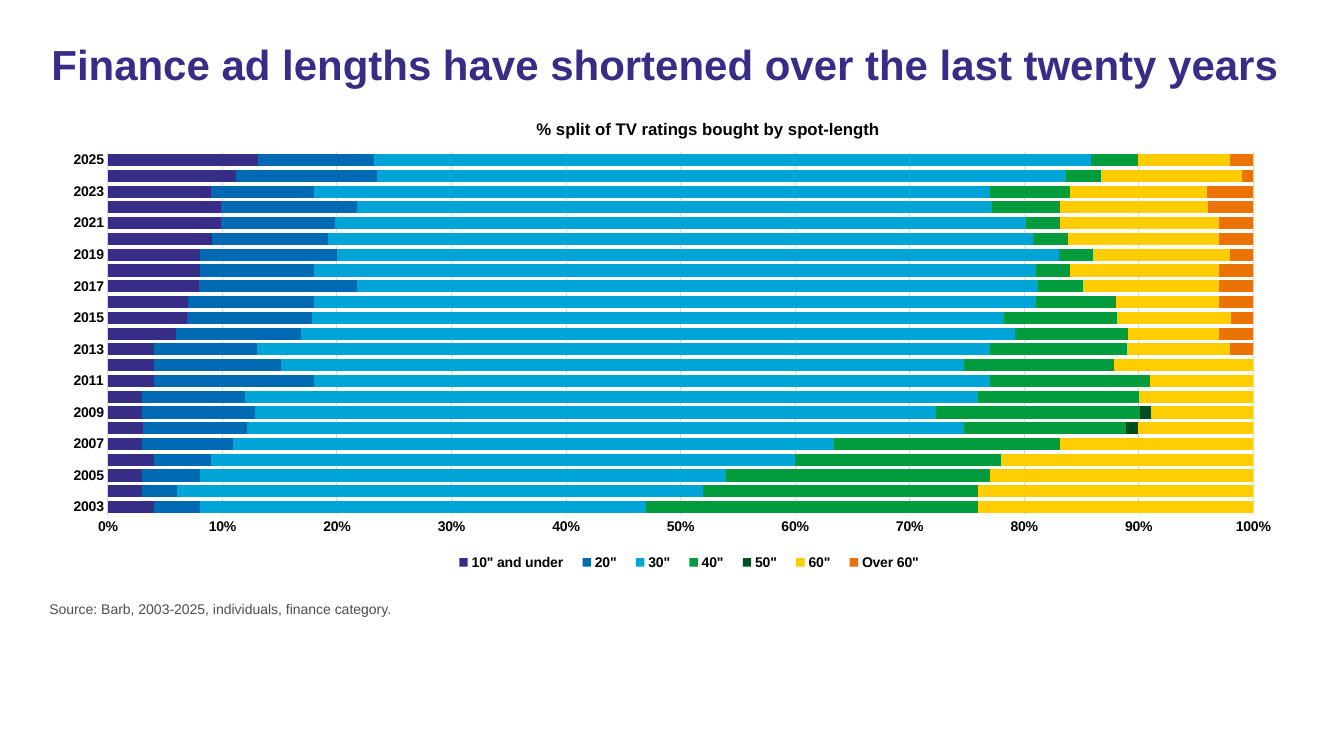
"""Build a slide showing how finance ad lengths have changed."""
from dataclasses import dataclass

import pptx
import pptx.chart.chart
import pptx.chart.data
import pptx.dml.color
import pptx.enum.chart
import pptx.enum.text
import pptx.oxml
import pptx.oxml.ns
import pptx.slide
import pptx.text.text
import pptx.util

RGBColor = pptx.dml.color.RGBColor
PURPLE = RGBColor(0x37, 0x2D, 0x87)
BLUE = RGBColor(0x00, 0x69, 0xB4)
SKY = RGBColor(0x00, 0xA5, 0xD7)
GREEN = RGBColor(0x00, 0x9B, 0x3C)
FOREST = RGBColor(0x00, 0x4E, 0x1E)
YELLOW = RGBColor(0xFF, 0xCD, 0x00)
ORANGE = RGBColor(0xEB, 0x73, 0x05)
BLACK = RGBColor(0x00, 0x00, 0x00)
GREY = RGBColor(0x4D, 0x4D, 0x4D)
GRID_GREY = RGBColor(0xD9, 0xD9, 0xD9)

FONT = "Arial"
CELL = pptx.util.Inches(0.1)
YEARS = range(2003, 2026)


@dataclass(frozen=True)
class Box:
    """A rectangle in columns and rows of the slide grid."""
    col: float
    row: float
    cols: float
    rows: float

    def emu(self) -> tuple[int, ...]:
        """Return left, top, width and height in EMU."""
        return tuple(round(n * CELL) for n in (self.col, self.row, self.cols, self.rows))


@dataclass(frozen=True)
class SpotLength:
    """One spot length with its yearly share of ratings."""
    name: str
    color: RGBColor
    shares: tuple[int, ...]


TITLE_BOX = Box(4.1, 3.9, 124, 11.2)
CHART_BOX = Box(4.8, 9.9, 123.7, 47.2)
SOURCE_BOX = Box(3.9, 59.1, 125.9, 3.3)
CHART_TITLE_BOX = Box(52.9, 11.5, 34, 2)
PLOT_BOX = Box(10.7, 15.1, 113.6, 36)
LEGEND_BOX = Box(44.1, 54.5, 48.5, 2.6)

SPOT_LENGTHS = (
    SpotLength('10" and under', PURPLE, (4, 3, 3, 4, 3, 3, 3, 3, 4, 4, 4, 6,
                                         7, 7, 8, 8, 8, 9, 10, 10, 9, 11, 13)),
    SpotLength('20"', BLUE, (4, 3, 5, 5, 8, 9, 10, 9, 14, 11, 9, 11,
                             11, 11, 14, 10, 12, 10, 10, 12, 9, 12, 10)),
    SpotLength('30"', SKY, (39, 46, 46, 51, 53, 62, 60, 64, 59, 59, 64, 63,
                            61, 63, 60, 63, 63, 61, 61, 56, 59, 59, 62)),
    SpotLength('40"', GREEN, (29, 24, 23, 18, 20, 14, 18, 14, 14, 13, 12, 10,
                              10, 7, 4, 3, 3, 3, 3, 6, 7, 3, 4)),
    SpotLength('50"', FOREST, (0,) * 5 + (1, 1) + (0,) * 16),
    SpotLength('60"', YELLOW, (24, 24, 23, 22, 17, 10, 9, 10, 9, 12, 9, 8,
                               10, 9, 12, 13, 12, 13, 14, 13, 12, 12, 8)),
    SpotLength('Over 60"', ORANGE, (0,) * 10 + (2, 3, 2, 3, 3, 3, 2, 3, 3, 4, 4, 1, 2)),
)


def style(font: pptx.text.text.Font, size: int, color: RGBColor, bold: bool) -> None:
    """Set the typeface, size, colour and weight of a font."""
    font.name, font.size, font.bold = FONT, pptx.util.Pt(size), bold
    font.color.rgb = color


def write(tf: pptx.text.text.TextFrame, text: str, size: int, color: RGBColor,
          bold: bool) -> pptx.text.text._Paragraph:
    """Write one styled run into the first paragraph."""
    p = tf.paragraphs[0]
    r = p.add_run()
    r.text = text
    style(r.font, size, color, bold)
    return p


def place(chart: pptx.chart.chart.Chart, part: str, box: Box, index: int) -> None:
    """Give a part of the chart a fixed place on the grid."""
    el = chart.element.xpath(f"c:chart/c:{part}")[0]
    for old in el.findall(pptx.oxml.ns.qn("c:layout")):
        el.remove(old)
    target = '<c:layoutTarget val="inner"/>' if part == "plotArea" else ""
    x = (box.col - CHART_BOX.col) / CHART_BOX.cols
    y = (box.row - CHART_BOX.row) / CHART_BOX.rows
    size = ""
    if part != "title":
        size = (f'<c:w val="{box.cols / CHART_BOX.cols:.4f}"/>'
                f'<c:h val="{box.rows / CHART_BOX.rows:.4f}"/>')
    el.insert(index, pptx.oxml.parse_xml(
        f'<c:layout {pptx.oxml.ns.nsdecls("c")}><c:manualLayout>{target}'
        f'<c:xMode val="edge"/><c:yMode val="edge"/>'
        f'<c:x val="{x:.4f}"/><c:y val="{y:.4f}"/>{size}'
        f'</c:manualLayout></c:layout>'))


def add_title(s: pptx.slide.Slide) -> None:
    """Fill the title placeholder."""
    sp = s.shapes.title
    sp.left, sp.top, sp.width, sp.height = TITLE_BOX.emu()
    tf = sp.text_frame
    tf.word_wrap = True
    tf.auto_size = pptx.enum.text.MSO_AUTO_SIZE.NONE
    tf.vertical_anchor = pptx.enum.text.MSO_ANCHOR.TOP
    p = write(tf, "Finance ad lengths have shortened over the last twenty years",
              30, PURPLE, True)
    p.alignment = pptx.enum.text.PP_ALIGN.LEFT
    p.line_spacing = 0.9


def add_ratings_chart(s: pptx.slide.Slide) -> None:
    """Add the stacked bars of ratings by spot length."""
    data = pptx.chart.data.CategoryChartData(number_format="0")
    data.categories = [str(year) for year in YEARS]
    for spot in SPOT_LENGTHS:
        data.add_series(spot.name, spot.shares)
    kind = pptx.enum.chart.XL_CHART_TYPE.BAR_STACKED_100
    chart = s.shapes.add_chart(kind, *CHART_BOX.emu(), data).chart
    style(chart.font, 10, BLACK, True)

    chart.has_title = True
    write(chart.chart_title.text_frame, "% split of TV ratings bought by spot-length",
          12, BLACK, True)
    chart.has_legend = True
    chart.legend.position = pptx.enum.chart.XL_LEGEND_POSITION.BOTTOM
    chart.legend.include_in_layout = False
    style(chart.legend.font, 10, BLACK, True)

    plot = chart.plots[0]
    plot.gap_width, plot.overlap, plot.vary_by_categories = 30, 100, False
    for series, spot in zip(plot.series, SPOT_LENGTHS):
        series.format.fill.solid()
        series.format.fill.fore_color.rgb = spot.color
        series.invert_if_negative = False

    years, shares = chart.category_axis, chart.value_axis
    for axis in (years, shares):
        axis.major_tick_mark = axis.minor_tick_mark = pptx.enum.chart.XL_TICK_MARK.NONE
        style(axis.tick_labels.font, 10, BLACK, True)
    shares.minimum_scale, shares.maximum_scale, shares.major_unit = 0, 1, 0.1
    shares.tick_labels.number_format = "0%"
    shares.tick_labels.number_format_is_linked = False
    shares.format.line.fill.background()
    for line in (years.format.line, shares.major_gridlines.format.line):
        line.color.rgb = GRID_GREY
        line.width = pptx.util.Pt(0.75)

    place(chart, "title", CHART_TITLE_BOX, 1)
    place(chart, "plotArea", PLOT_BOX, 0)
    place(chart, "legend", LEGEND_BOX, 1)


def add_source(s: pptx.slide.Slide) -> None:
    """Add the source line below the chart."""
    tf = s.shapes.add_textbox(*SOURCE_BOX.emu()).text_frame
    tf.word_wrap = True
    write(tf, "Source: Barb, 2003-2025, individuals, finance category.", 10, GREY, False)


def main() -> None:
    """Build and save the slide."""
    prs = pptx.Presentation()
    prs.slide_width = pptx.util.Inches(13.33)
    prs.slide_height = pptx.util.Inches(7.5)
    s = prs.slides.add_slide(prs.slide_layouts[5])
    add_source(s)
    add_ratings_chart(s)
    add_title(s)
    prs.save("out.pptx")


if __name__ == "__main__":
    main()
